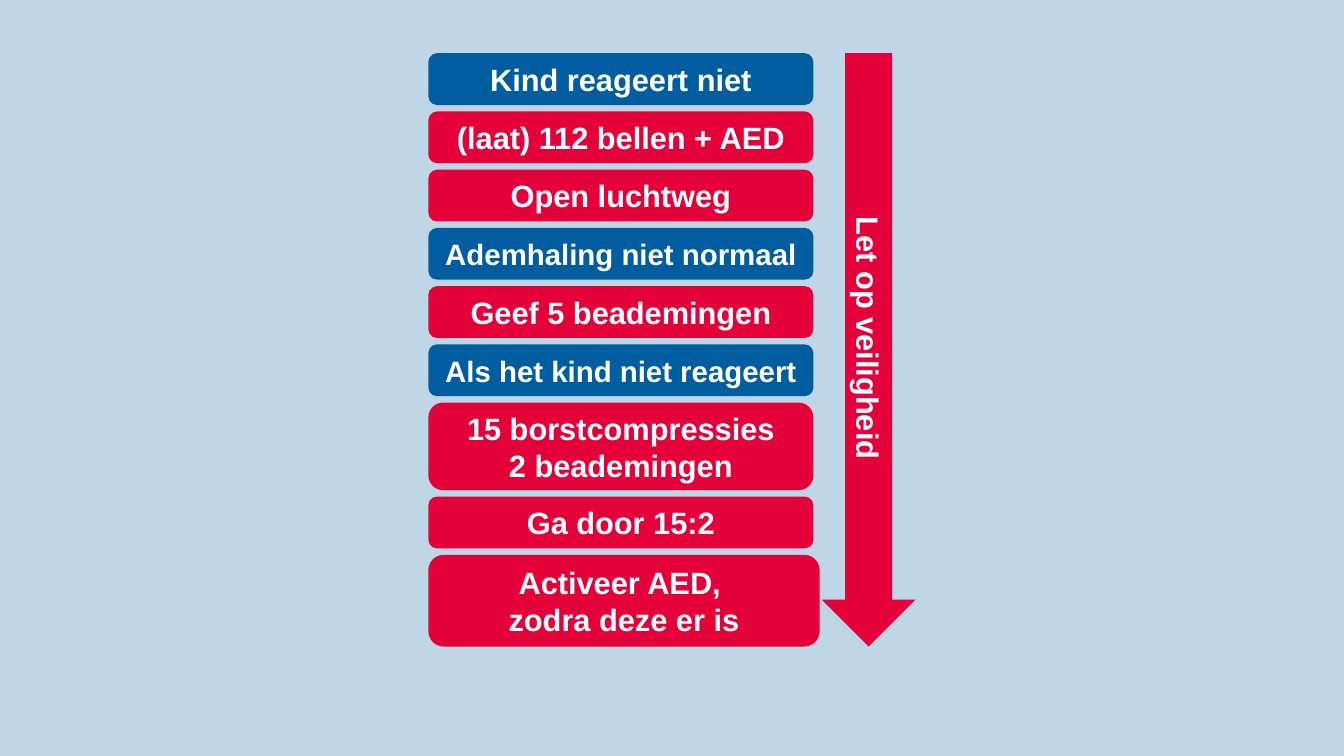
"""Build a slide with the steps of child resuscitation beside a safety arrow."""
from dataclasses import dataclass

from pptx import Presentation
from pptx.dml.color import RGBColor
from pptx.enum.shapes import MSO_SHAPE
from pptx.enum.text import MSO_ANCHOR, PP_ALIGN
from pptx.shapes.autoshape import Shape
from pptx.slide import Slide
from pptx.util import Inches, Pt

RED = RGBColor(0xE4, 0x00, 0x38)
BLUE = RGBColor(0x00, 0x5D, 0x9F)
WHITE = RGBColor(0xFF, 0xFF, 0xFF)
SKY = RGBColor(0xBF, 0xD6, 0xE7)

WIDTH, HEIGHT = Inches(13.33), Inches(7.5)
COLS, ROWS = 960, 540
LEFT, TOP, GAP = 306, 38, 4.6


@dataclass
class Step:
    text: str
    fill: RGBColor = RED
    size: int = 22
    wide: float = 275
    high: float = 37


STEPS = [
    Step("Kind reageert niet", BLUE),
    Step("(laat) 112 bellen + AED"),
    Step("Open luchtweg"),
    Step("Ademhaling niet normaal", BLUE, 21),
    Step("Geef 5 beademingen"),
    Step("Als het kind niet reageert", BLUE, 21),
    Step("15 borstcompressies\n2 beademingen", high=62.5),
    Step("Ga door 15:2"),
    Step("Activeer AED, \nzodra deze er is", wide=279.5, high=65.5),
]


def draw(slide: Slide, kind: MSO_SHAPE, step: Step, col: float, row: float) -> Shape:
    shape = slide.shapes.add_shape(
        kind,
        round(WIDTH * col / COLS),
        round(HEIGHT * row / ROWS),
        round(WIDTH * step.wide / COLS),
        round(HEIGHT * step.high / ROWS),
    )
    shape.shadow.inherit = False
    shape.fill.solid()
    shape.fill.fore_color.rgb = step.fill
    shape.line.fill.background()
    frame = shape.text_frame
    frame.word_wrap = True
    frame.vertical_anchor = MSO_ANCHOR.MIDDLE
    frame.text = step.text
    style = {"name": "Arial", "size": Pt(step.size), "bold": True}
    for para in frame.paragraphs:
        para.alignment = PP_ALIGN.CENTER
        for run in para.runs:
            for key, value in style.items():
                setattr(run.font, key, value)
            run.font.color.rgb = WHITE
    return shape


def main() -> None:
    deck = Presentation()
    deck.slide_width, deck.slide_height = WIDTH, HEIGHT
    slide = deck.slides.add_slide(deck.slide_layouts[6])
    back = slide.background.fill
    back.solid()
    back.fore_color.rgb = SKY

    row = TOP
    for step in STEPS:
        draw(slide, MSO_SHAPE.ROUNDED_RECTANGLE, step, LEFT, row)
        row += step.high + GAP

    label = Step("Let op veiligheid", wide=67, high=row - GAP - TOP)
    arrow = draw(slide, MSO_SHAPE.DOWN_ARROW, label, 587, TOP)
    arrow.text_frame._txBody.bodyPr.set("vert", "vert")
    deck.save("out.pptx")


if __name__ == "__main__":
    main()
